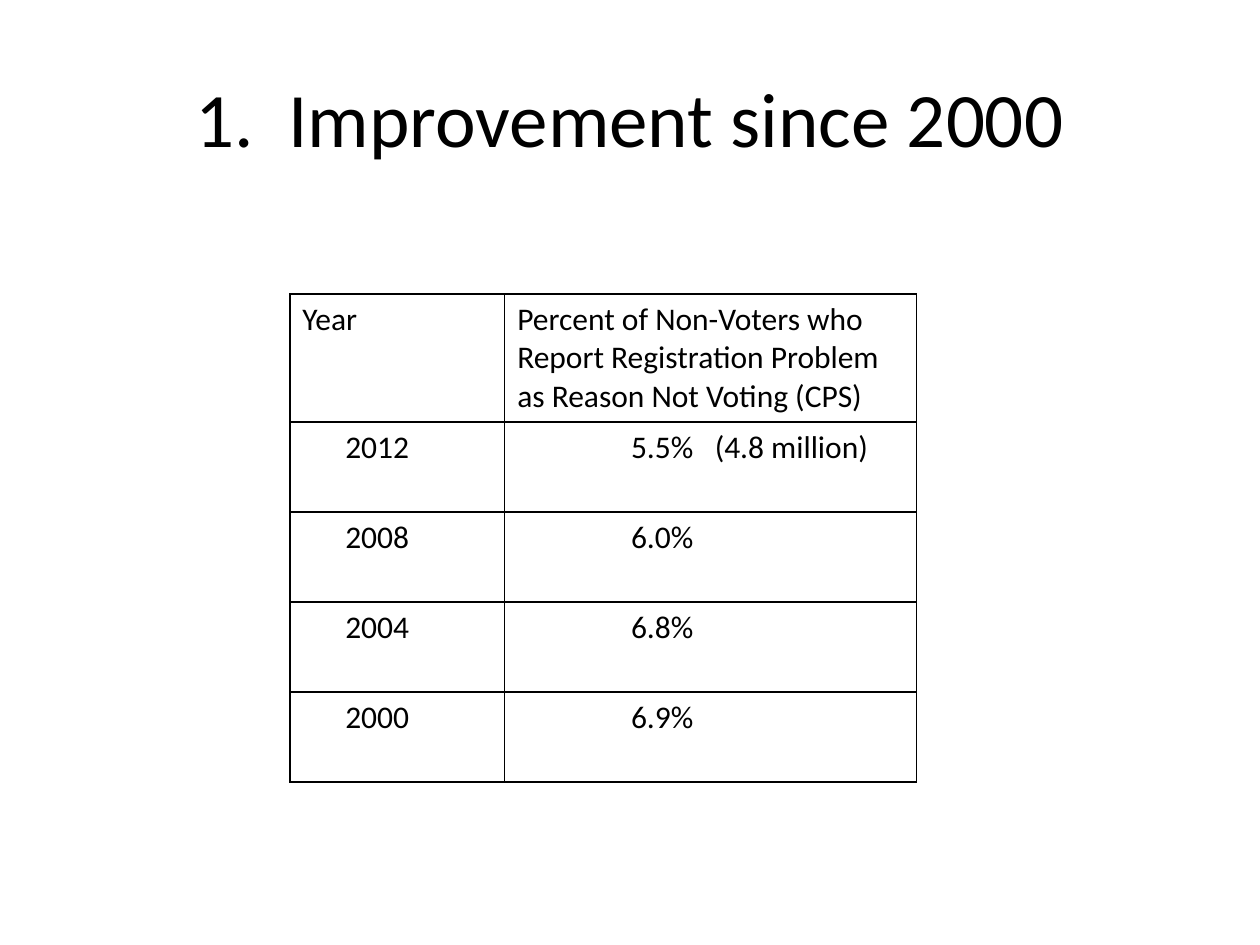
from dataclasses import dataclass

import pptx
import pptx.dml.color
import pptx.enum.text
import pptx.oxml
import pptx.oxml.ns
import pptx.util

Pt = pptx.util.Pt


@dataclass(frozen=True)
class Theme:
    font: str = "Calibri"
    ink: pptx.dml.color.RGBColor = pptx.dml.color.RGBColor(0, 0, 0)
    title_size: int = 44
    body_size: int = 18
    border: float = 1


THEME = Theme()


def style_runs(paragraph, size):
    for run in paragraph.runs:
        run.font.name = THEME.font
        run.font.size = Pt(size)
        run.font.color.rgb = THEME.ink


def add_borders(cell):
    properties = cell._tc.get_or_add_tcPr()
    for position, side in enumerate(("lnL", "lnR", "lnT", "lnB")):
        properties.insert(position, pptx.oxml.parse_xml(
            f'<a:{side} {pptx.oxml.ns.nsdecls("a")} w="{Pt(THEME.border)}">'
            f'<a:solidFill><a:srgbClr val="{THEME.ink}"/></a:solidFill></a:{side}>'))


deck = pptx.Presentation()
deck.slide_width, deck.slide_height = Pt(720), Pt(540)
slide = deck.slides.add_slide(deck.slide_layouts[6])

title = slide.shapes.add_textbox(Pt(36), Pt(21.6), Pt(648), Pt(90)).text_frame
title.word_wrap = True
title.vertical_anchor = pptx.enum.text.MSO_ANCHOR.MIDDLE
title.text = "1.  Improvement since 2000"
title.paragraphs[0].alignment = pptx.enum.text.PP_ALIGN.CENTER
style_runs(title.paragraphs[0], THEME.title_size)

# Each cell is a list of runs.
records = [
    (["Year"],
     ["Percent of Non-Voters who Report Registration Problem as Reason Not Voting (CPS)"]),
    (["2012"], ["5.5%", " ", "(4.8 million)"]),
    (["2008"], ["6.0%"]),
    (["2004"], ["6.8%"]),
    (["2000"], ["6.9%"]),
]
column_widths = [122.8, 235.4]
header_height, record_height = 73.2, 51.4
indents = [24.5, 65]
count_gap = 8.1  # extra width of the space before the count

table = slide.shapes.add_table(
    len(records), len(column_widths), Pt(165.6), Pt(168), Pt(sum(column_widths)),
    Pt(header_height + record_height * (len(records) - 1))).table
table.first_row = table.horz_banding = False
for column, width in zip(table.columns, column_widths):
    column.width = Pt(width)

for row_index, record in enumerate(records):
    table.rows[row_index].height = Pt(record_height if row_index else header_height)
    for column_index, parts in enumerate(record):
        cell = table.cell(row_index, column_index)
        cell.fill.background()
        add_borders(cell)
        paragraph = cell.text_frame.paragraphs[0]
        for part in parts:
            run = paragraph.add_run()
            run.text = part
            if part == " ":
                run.font._element.set("spc", str(round(count_gap * 100)))
        style_runs(paragraph, THEME.body_size)
        if row_index:
            paragraph._p.get_or_add_pPr().set("marL", str(Pt(indents[column_index])))

deck.save("out.pptx")
